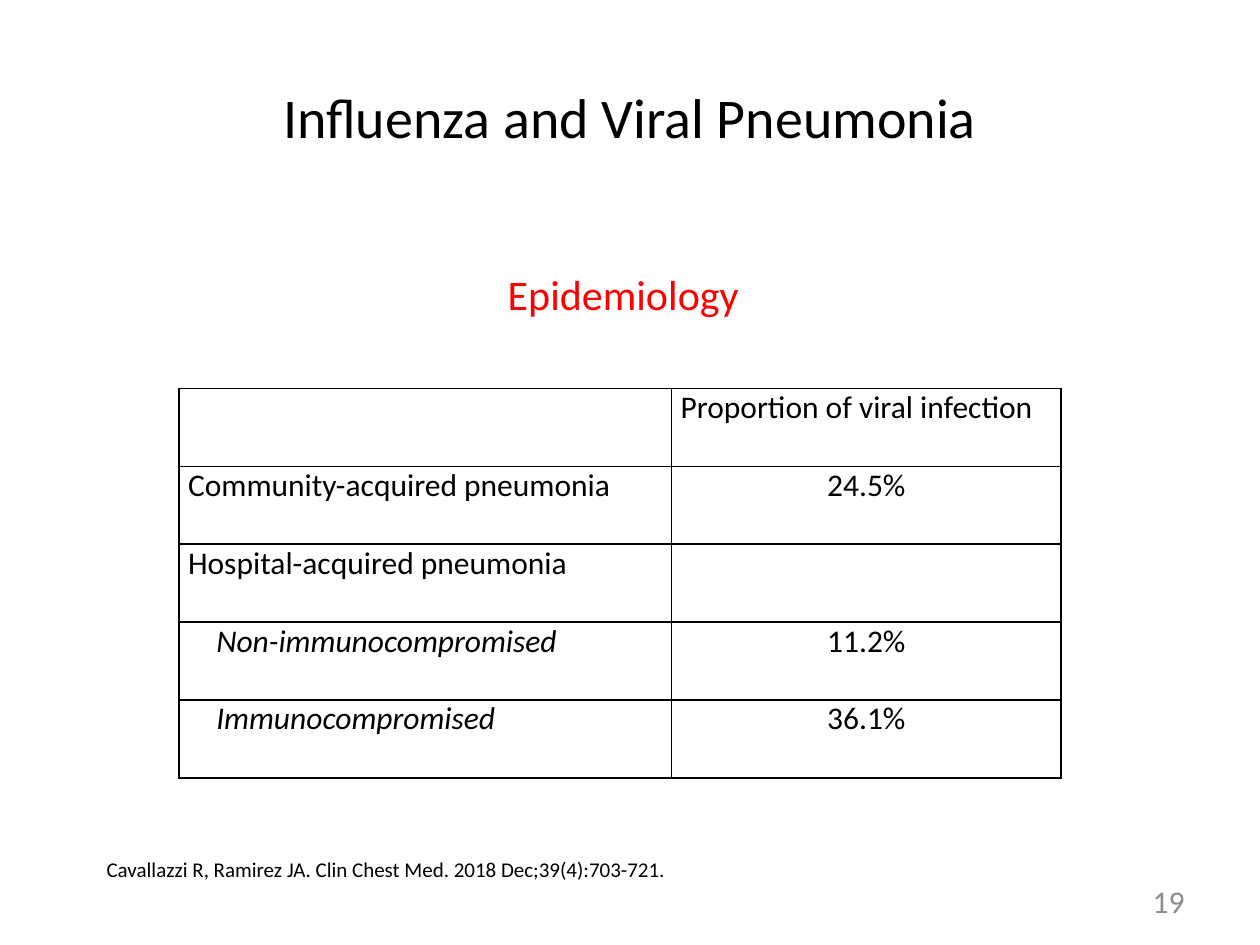
from dataclasses import dataclass

import pptx
import pptx.dml.color
import pptx.enum.text
import pptx.oxml
import pptx.oxml.ns
import pptx.util

Cm = pptx.util.Cm
Pt = pptx.util.Pt
ALIGN = pptx.enum.text.PP_ALIGN
ANCHOR = pptx.enum.text.MSO_ANCHOR

FONT = "Calibri"
COLORS = {"text": "000000", "accent": "FF0000", "number": "8C8C8C", "border": "000000"}


@dataclass
class Label:
    text: str
    left: float
    top: float
    width: float
    height: float
    size: int
    color: str = "text"
    align: ALIGN = ALIGN.LEFT
    anchor: ANCHOR = ANCHOR.TOP
    wrap: bool = False


@dataclass
class Row:
    name: str
    share: str
    share_align: ALIGN = ALIGN.CENTER
    is_subgroup: bool = False


TITLE = Label("Influenza and Viral Pneumonia", 1.27, 0.76, 22.86, 3.18, 32,
              align=ALIGN.CENTER, anchor=ANCHOR.MIDDLE, wrap=True)
LABELS = [
    Label("Epidemiology", 9.96, 5.28, 5.21, 1.27, 24, "accent", ALIGN.CENTER),
    Label("Cavallazzi R, Ramirez JA. Clin Chest Med. 2018 Dec;39(4):703-721.",
          1.9, 17.15, 11.91, 0.77, 12),
    Label("19", 18.2, 17.65, 5.93, 1.01, 18, "number", ALIGN.RIGHT, ANCHOR.MIDDLE, True),
]
ROWS = [
    Row("", "Proportion of viral infection", ALIGN.LEFT),
    Row("Community-acquired pneumonia", "24.5%"),
    Row("Hospital-acquired pneumonia", ""),
    Row("Non-immunocompromised", "11.2%", is_subgroup=True),
    Row("Immunocompromised", "36.1%", is_subgroup=True),
]
COLUMN_WIDTHS = (9.93, 7.85)
ROW_HEIGHT = 1.57
CELL_MARGIN = 0.18
SUBGROUP_INDENT = 0.57


def write_text(text_frame, text: str, size: int, color: str, align: ALIGN,
               italic: bool = False) -> None:
    paragraph = text_frame.paragraphs[0]
    paragraph.alignment = align
    paragraph.font.size = Pt(size)
    if not text:
        return
    run = paragraph.add_run()
    run.text = text
    run.font.name = FONT
    run.font.size = Pt(size)
    run.font.italic = italic
    run.font.color.rgb = pptx.dml.color.RGBColor.from_string(COLORS[color])


def fill_label(shape, label: Label) -> None:
    shape.left, shape.top = Cm(label.left), Cm(label.top)
    shape.width, shape.height = Cm(label.width), Cm(label.height)
    text_frame = shape.text_frame
    text_frame.word_wrap = label.wrap
    text_frame.vertical_anchor = label.anchor
    write_text(text_frame, label.text, label.size, label.color, label.align)


def add_borders(cell) -> None:
    properties = cell._tc.get_or_add_tcPr()
    for side in ("lnL", "lnR", "lnT", "lnB"):
        properties.append(pptx.oxml.parse_xml(
            f'<a:{side} {pptx.oxml.ns.nsdecls("a")} w="{Pt(1)}"><a:solidFill>'
            f'<a:srgbClr val="{COLORS["border"]}"/></a:solidFill></a:{side}>'))


def fill_cell(cell, text: str, align: ALIGN, is_subgroup: bool = False) -> None:
    add_borders(cell)
    cell.fill.background()
    cell.margin_left = Cm(CELL_MARGIN + (SUBGROUP_INDENT if is_subgroup else 0))
    cell.margin_right = Cm(CELL_MARGIN)
    cell.margin_top = cell.margin_bottom = 0
    write_text(cell.text_frame, text, 18, "text", align, is_subgroup)


def add_infection_table(slide) -> None:
    frame = slide.shapes.add_table(
        len(ROWS), len(COLUMN_WIDTHS), Cm(3.61), Cm(7.83),
        Cm(sum(COLUMN_WIDTHS)), Cm(ROW_HEIGHT * len(ROWS)))
    table = frame.table
    table.first_row = table.horz_banding = False
    for column, width in zip(table.columns, COLUMN_WIDTHS):
        column.width = Cm(width)
    for index, row in enumerate(ROWS):
        table.rows[index].height = Cm(ROW_HEIGHT)
        fill_cell(table.cell(index, 0), row.name, ALIGN.LEFT, row.is_subgroup)
        fill_cell(table.cell(index, 1), row.share, row.share_align)


def main() -> None:
    presentation = pptx.Presentation()
    presentation.slide_width, presentation.slide_height = Cm(25.4), Cm(19.05)
    slide = presentation.slides.add_slide(presentation.slide_layouts[5])

    # Title
    fill_label(slide.shapes.title, TITLE)

    # Table of viral infection by type of pneumonia
    add_infection_table(slide)

    # Subtitle, reference and page number
    for label in LABELS:
        fill_label(slide.shapes.add_textbox(0, 0, 0, 0), label)

    presentation.save("out.pptx")


if __name__ == "__main__":
    main()
